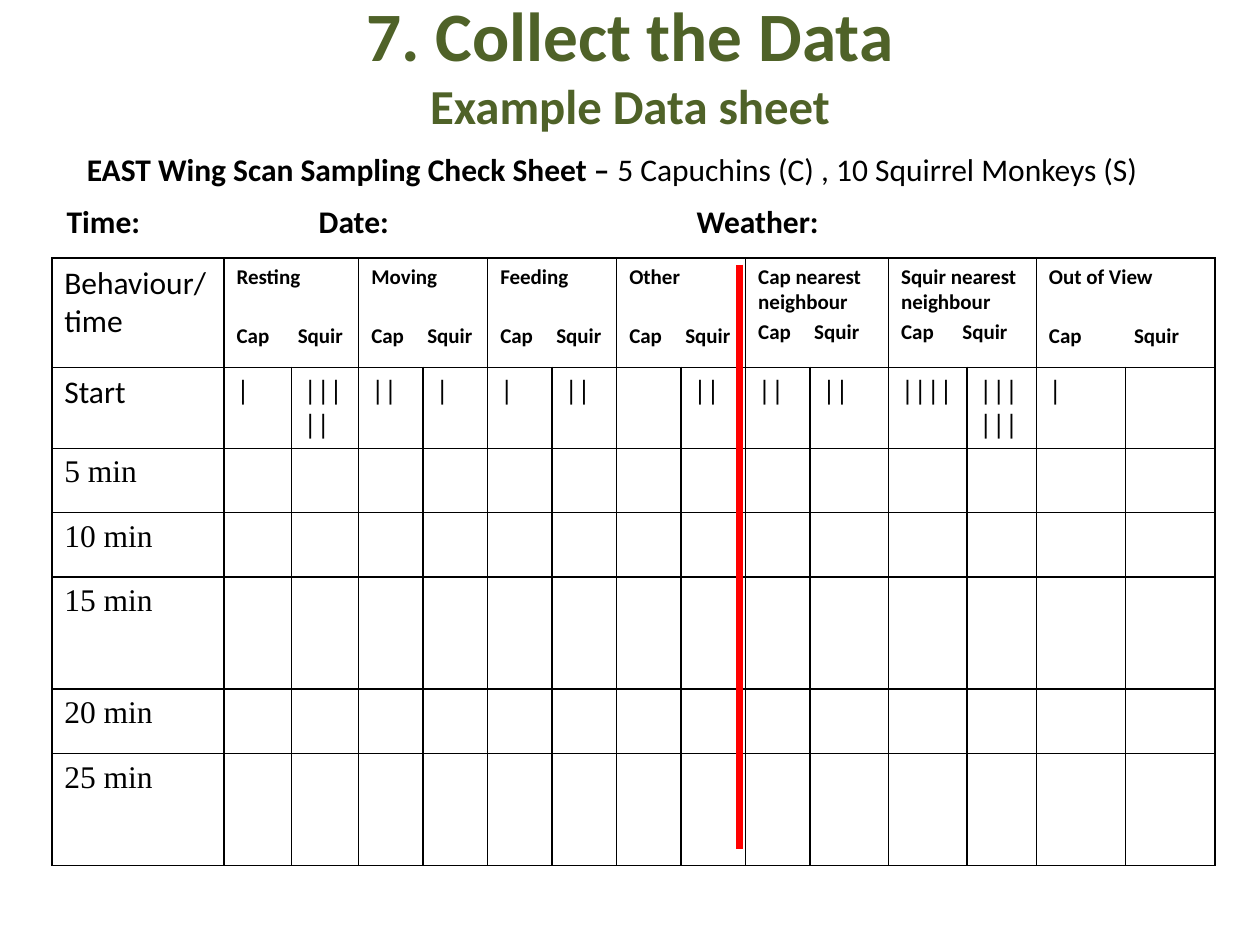
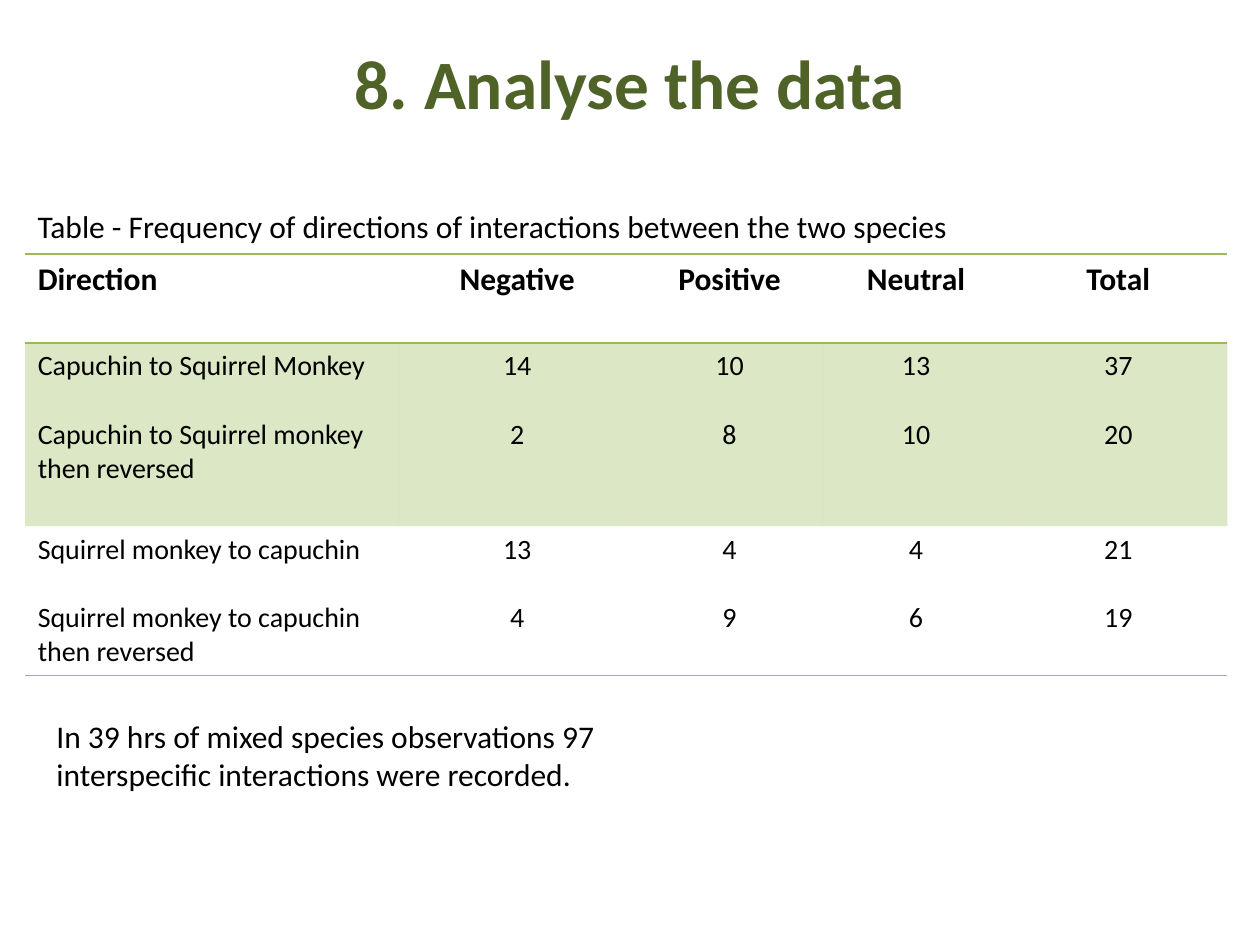
from lxml import etree
from pptx import Presentation
from pptx import util as u
from pptx.dml.color import RGBColor
from pptx.enum import shapes, text
from pptx.oxml import ns

Pt = u.Pt
HUES = {"title": "4F6228", "ink": "000000", "paper": "FFFFFF",
        "leaf": "9BBB59", "mark": "FF0000"}
BODY = {"name": "Calibri", "size": Pt(18), "bold": False}
BOLD = {**BODY, "bold": True}
HEAD = {**BOLD, "size": Pt(39.6)}
SUB = {**BOLD, "size": Pt(27.9)}
SMALL = {**BOLD, "size": Pt(12)}
TALLY = {**BODY, "size": Pt(16)}
SERIF = {**BODY, "name": "Times New Roman"}
MID = text.PP_ALIGN.CENTER


def sub(node, tag, **attrs):
    return etree.SubElement(node, ns.qn(tag), attrs)


class Deck:
    def __init__(self):
        self.prs = Presentation()
        self.prs.slide_width, self.prs.slide_height = Pt(720), Pt(540)
        self.slide = None

    def put(self, frame, paras, hue="ink", align=None, gap=0, tabs=()):
        for i, runs in enumerate(paras):
            para = frame.paragraphs[0] if i == 0 else frame.add_paragraph()
            para.alignment = align
            para.space_before = Pt(gap if i else 0)
            if tabs:
                stops = sub(para._p.get_or_add_pPr(), "a:tabLst")
                for stop in tabs:
                    sub(stops, "a:tab", pos=str(Pt(stop)), algn="l")
            for words, style in runs:
                run = para.add_run()
                run.text = words
                for key, val in style.items():
                    setattr(run.font, key, val)
                run.font.color.rgb = RGBColor.from_string(HUES[hue])

    def start(self, top, *paras):
        self.slide = self.prs.slides.add_slide(self.prs.slide_layouts[5])
        box = self.slide.shapes.title
        box.left, box.top, box.width, box.height = Pt(0), Pt(top), Pt(720), Pt(90)
        frame = box.text_frame
        frame.auto_size = text.MSO_AUTO_SIZE.NONE
        frame.vertical_anchor = text.MSO_ANCHOR.TOP
        self.put(frame, [[para] for para in paras], "title", MID)

    def label(self, left, top, width, height, runs, wrap=True, tabs=()):
        box = self.slide.shapes.add_textbox(Pt(left), Pt(top), Pt(width), Pt(height))
        box.text_frame.word_wrap = wrap
        self.put(box.text_frame, [runs], tabs=tabs)

    def grid(self, left, top, cols, rows):
        frame = self.slide.shapes.add_table(
            len(rows), len(cols), Pt(left), Pt(top), Pt(sum(cols)), Pt(sum(rows)))
        table = frame.table
        table.first_row = table.horz_banding = False
        for col, width in zip(table.columns, cols):
            col.width = Pt(width)
        for row, height in zip(table.rows, rows):
            row.height = Pt(height)
        return table

    def paint(self, cell, edges, line, hue=None, alpha=0):
        props = cell._tc.get_or_add_tcPr()
        for side in "LRTB":
            edge = sub(props, "a:ln" + side, w=str(Pt(1)))
            if side in edges:
                sub(sub(edge, "a:solidFill"), "a:srgbClr", val=HUES[line])
            else:
                sub(edge, "a:noFill")
        if hue is None:
            cell.fill.background()
            return
        cell.fill.solid()
        cell.fill.fore_color.rgb = RGBColor.from_string(HUES[hue])
        color = props.find(ns.qn("a:solidFill")).find(ns.qn("a:srgbClr"))
        sub(color, "a:alpha", val=str(alpha * 1000))

    def rule(self, x, top, end, hue, width):
        line = self.slide.shapes.add_connector(
            shapes.MSO_CONNECTOR.STRAIGHT, Pt(x), Pt(top), Pt(x), Pt(end))
        line.line.color.rgb = RGBColor.from_string(HUES[hue])
        line.line.width = Pt(width)
        sub(line._element.spPr, "a:effectLst")


def collect(deck):
    deck.start(-7.9, ("7. Collect the Data", HEAD), ("Example Data sheet", SUB))
    cols = [98.4] + [38.5] * 2 + [36.86] * 7 + [44.8] * 2 + [39.7] + [51] * 2
    table = deck.grid(29.6, 147.5, cols, [62.4, 46.3, 36.7, 36.9, 64, 36.9, 64])
    for cell in table.iter_cells():
        deck.paint(cell, "LRTB", "ink", "paper", 50)

    groups = [("Resting", 35, 19.4), ("Moving", 32, 19.4), ("Feeding", 32, 19.4),
              ("Other", 32, 19.4), ("Cap nearest neighbour", 32, 2.4),
              ("Squir nearest neighbour", 35, 2.4), ("Out of View", 48.6, 19.4)]
    for i, (name, stop, gap) in enumerate(groups):
        cell = table.cell(0, 2 * i + 1)
        cell.merge(table.cell(0, 2 * i + 2))
        deck.put(cell.text_frame, [[(name, SMALL)], [("Cap\tSquir", SMALL)]],
                 gap=gap, tabs=[stop])

    times = ["Behaviour/time", "Start", "5 min", "10 min", "15 min", "20 min", "25 min"]
    for row, name in enumerate(times):
        style = BODY if row < 2 else SERIF
        deck.put(table.cell(row, 0).text_frame, [[(name, style)]])
    counts = [1, 5, 2, 1, 1, 2, 0, 2, 2, 2, 4, 6, 1, 0]
    for col, count in enumerate(counts, 1):
        if count:
            deck.put(table.cell(1, col).text_frame, [[("|" * count, TALLY)]])

    deck.label(31, 111.6, 589.7, 29, [("Time:\tDate:\tWeather:", BOLD)], tabs=[144, 360])
    deck.label(42.5, 82.1, 615.6, 29,
               [("EAST Wing Scan Sampling Check Sheet – ", BOLD),
                ("5 Capuchins (C) , 10 Squirrel Monkeys (S)", BODY)], wrap=False)
    deck.rule(422.6, 151.2, 485.3, "mark", 4.5)


def analyse(deck):
    deck.start(19.2, ("8. Analyse the data", HEAD))
    table = deck.grid(14.4, 145.2, [213.1, 136.1, 106.6, 106.6, 124.6],
                      [50.7, 104.8, 85.4])
    rows = [
        [["Direction"], ["Negative"], ["Positive"], ["Neutral"], ["Total"]],
        [["Capuchin to Squirrel Monkey", "Capuchin to Squirrel monkey then reversed"],
         ["14", "2"], ["10", "8"], ["13", "10"], ["37", "20"]],
        [["Squirrel monkey to capuchin", "Squirrel monkey to capuchin then reversed"],
         ["13", "4"], ["4", "9"], ["4", "6"], ["21", "19"]],
    ]
    looks = [("TB", None, BOLD), ("T", "leaf", TALLY), ("B", None, TALLY)]
    for r, (row, (edges, hue, style)) in enumerate(zip(rows, looks)):
        for c, lines in enumerate(row):
            cell = table.cell(r, c)
            deck.paint(cell, edges, "leaf", hue, 35)
            deck.put(cell.text_frame, [[(line, style)] for line in lines],
                     align=MID if c else None, gap=19.5)

    deck.label(14.4, 114.5, 578.2, 29, [
        ("Table - Frequency of directions of interactions between the two species", BODY)])
    deck.label(25.2, 406.1, 362.9, 51, [
        ("In 39 hrs of mixed species observations 97 interspecific interactions"
         " were recorded.", BODY)])


def main():
    deck = Deck()
    collect(deck)
    analyse(deck)
    deck.prs.save("out.pptx")


if __name__ == "__main__":
    main()
